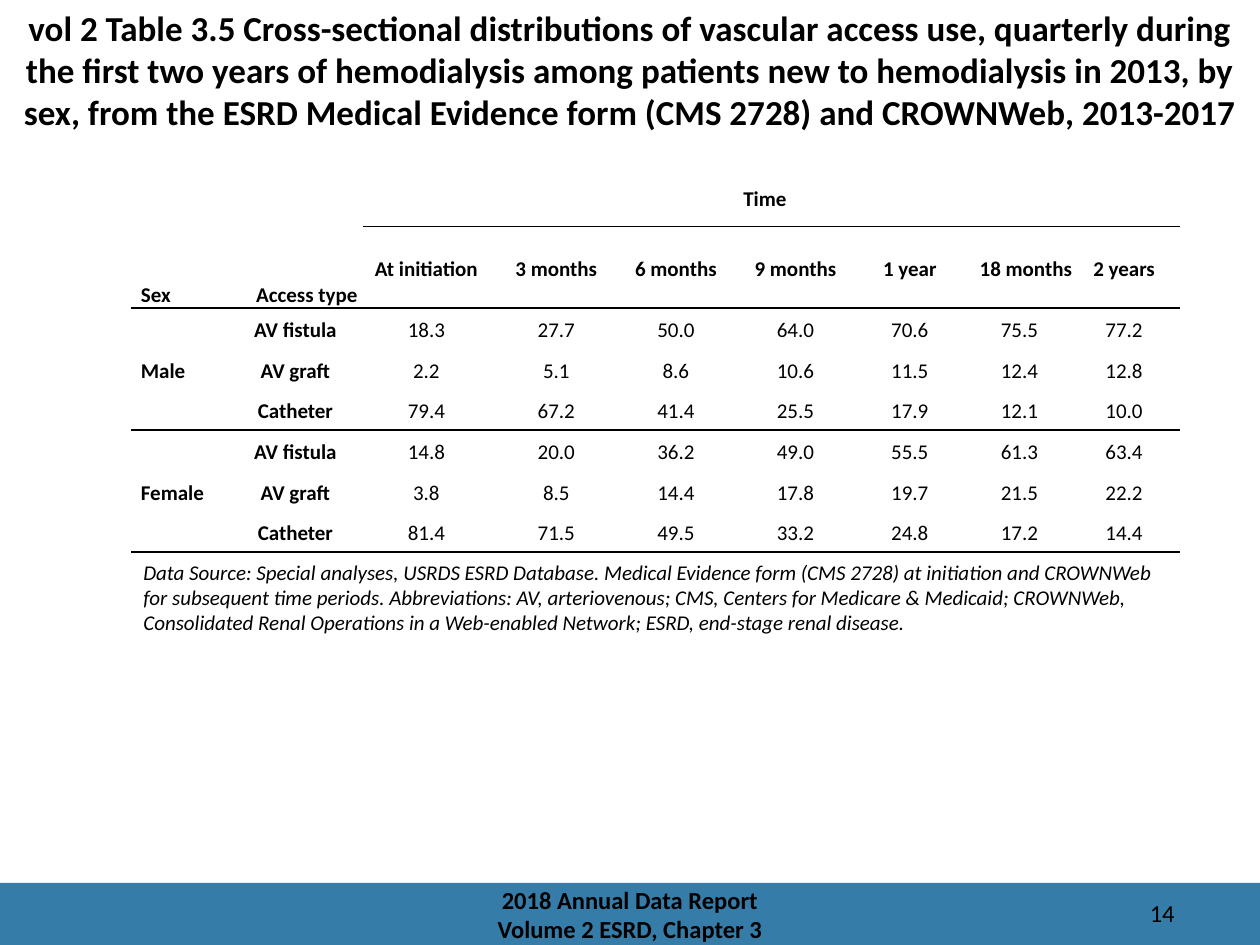
from dataclasses import dataclass

from lxml import etree
from pptx import Presentation
from pptx.dml.color import RGBColor
from pptx.enum.shapes import MSO_SHAPE
from pptx.enum.text import MSO_ANCHOR, PP_ALIGN
from pptx.oxml.ns import qn
from pptx.util import Cm, Pt

LEFT, CENTER, RIGHT = PP_ALIGN.LEFT, PP_ALIGN.CENTER, PP_ALIGN.RIGHT
TOP, MIDDLE, BOTTOM = MSO_ANCHOR.TOP, MSO_ANCHOR.MIDDLE, MSO_ANCHOR.BOTTOM
RECTANGLE = MSO_SHAPE.RECTANGLE


@dataclass(frozen=True)
class Theme:
    font: str = "Calibri"
    ink: str = "000000"
    paper: str = "FFFFFF"
    band: str = "367CA8"
    title_size: int = 20
    footer_size: int = 14
    body_size: int = 12
    rule_width: int = 1


THEME = Theme()
TITLE = (
    "vol 2 Table 3.5 Cross-sectional distributions of vascular access use, quarterly during "
    "the first two years of hemodialysis among patients new to hemodialysis in 2013, by sex, "
    "from the ESRD Medical Evidence form (CMS 2728) and CROWNWeb, 2013-2017"
)
SOURCE_NOTE = (
    "Data Source: Special analyses, USRDS ESRD Database. Medical Evidence form (CMS 2728) at "
    "initiation and CROWNWeb for subsequent time periods. Abbreviations: AV, arteriovenous; "
    "CMS, Centers for Medicare & Medicaid; CROWNWeb, Consolidated Renal Operations in a "
    "Web-enabled Network; ESRD, end-stage renal disease."
)
FOOTER = "2018 Annual Data Report\vVolume 2 ESRD, Chapter 3"
PAGE_NUMBER = "14"
TIMES = ["At initiation", "3 months", "6 months", "9 months", "1 year", "18 months", "2 years"]
ACCESS_TYPES = ["AV fistula", "AV graft", "Catheter"]
SHARES = {
    "Male": [
        ["18.3", "27.7", "50.0", "64.0", "70.6", "75.5", "77.2"],
        ["2.2", "5.1", "8.6", "10.6", "11.5", "12.4", "12.8"],
        ["79.4", "67.2", "41.4", "25.5", "17.9", "12.1", "10.0"],
    ],
    "Female": [
        ["14.8", "20.0", "36.2", "49.0", "55.5", "61.3", "63.4"],
        ["3.8", "8.5", "14.4", "17.8", "19.7", "21.5", "22.2"],
        ["81.4", "71.5", "49.5", "33.2", "24.8", "17.2", "14.4"],
    ],
}
COLUMN_WIDTHS = [2.22, 2.45, 2.83, 2.41, 2.41, 2.41, 2.2, 2.22, 2.0]
HEADER_HEIGHTS = [1.19, 1.64]
DATA_HEIGHT = 0.82
LABEL_COLUMNS = 2
HEADER_ROWS = len(HEADER_HEIGHTS)
GROUP_SIZE = len(ACCESS_TYPES)
TABLE_LEFT, TABLE_TOP = 2.64, 3.38


def write_text(frame, text, *, size, bold=False, italic=False, align=LEFT,
               anchor=TOP, line_spacing=None):
    frame.word_wrap = True
    frame.vertical_anchor = anchor
    paragraph = frame.paragraphs[0]
    paragraph.text = text
    paragraph.alignment = align
    paragraph.line_spacing = line_spacing
    for run in paragraph.runs:
        run.font.name = THEME.font
        run.font.size = Pt(size)
        run.font.bold = bold
        run.font.italic = italic
        run.font.color.rgb = RGBColor.from_string(THEME.ink)


def add_text(slide, text, box, **text_format):
    shape = slide.shapes.add_textbox(*map(Cm, box))
    write_text(shape.text_frame, text, **text_format)


def add_band(slide, box):
    shape = slide.shapes.add_shape(RECTANGLE, *map(Cm, box))
    shape.shadow.inherit = False
    shape.fill.solid()
    shape.fill.fore_color.rgb = RGBColor.from_string(THEME.band)
    shape.line.fill.background()


def set_borders(cell, ruled_sides):
    properties = cell._tc.get_or_add_tcPr()
    for side in ("lnL", "lnR", "lnT", "lnB"):
        line = etree.SubElement(properties, qn(f"a:{side}"))
        if side in ruled_sides:
            line.set("w", str(Pt(THEME.rule_width)))
            fill = etree.SubElement(line, qn("a:solidFill"))
            etree.SubElement(fill, qn("a:srgbClr"), val=THEME.ink)
        else:
            line.set("w", "0")
            etree.SubElement(line, qn("a:noFill"))


def find_ruled_sides(cell, row, column):
    def has_rule_above(edge):
        if edge < HEADER_ROWS:
            return edge == 1 and column >= LABEL_COLUMNS
        return (edge - HEADER_ROWS) % GROUP_SIZE == 0

    height = cell.span_height if cell.is_merge_origin else 1
    sides = {"lnT": has_rule_above(row), "lnB": has_rule_above(row + height)}
    return [side for side, ruled in sides.items() if ruled]


def build_rows():
    rows = [["Sex", "Access type", "Time"], ["", "", *TIMES]]
    for sex, group in SHARES.items():
        for index, (access, values) in enumerate(zip(ACCESS_TYPES, group)):
            rows.append([sex if index == 0 else "", access, *values])
    return rows


def merge_cells(table):
    table.cell(0, LABEL_COLUMNS).merge(table.cell(0, len(COLUMN_WIDTHS) - 1))
    for column in range(LABEL_COLUMNS):
        table.cell(0, column).merge(table.cell(HEADER_ROWS - 1, column))
    for group in range(len(SHARES)):
        first = HEADER_ROWS + group * GROUP_SIZE
        table.cell(first, 0).merge(table.cell(first + GROUP_SIZE - 1, 0))


def format_cell(cell, row, column, text):
    set_borders(cell, find_ruled_sides(cell, row, column))
    cell.fill.background()
    if row >= HEADER_ROWS and column < LABEL_COLUMNS:
        cell.fill.solid()
        cell.fill.fore_color.rgb = RGBColor.from_string(THEME.paper)
    cell.margin_left = Cm(0 if text == "18 months" else 0.2)
    cell.margin_right = Cm(0 if text in ("18 months", "Access type") else 0.46)
    cell.margin_top = cell.margin_bottom = 0
    is_label = column < LABEL_COLUMNS
    if text:
        write_text(cell.text_frame, text, size=THEME.body_size,
                   bold=row < HEADER_ROWS or is_label,
                   align=LEFT if column == 0 else CENTER, line_spacing=1.15)
    cell.vertical_anchor = BOTTOM if row == 0 and is_label else MIDDLE


def add_access_table(slide):
    rows = build_rows()
    heights = HEADER_HEIGHTS + [DATA_HEIGHT] * (len(rows) - HEADER_ROWS)
    frame = slide.shapes.add_table(
        len(rows), len(COLUMN_WIDTHS), Cm(TABLE_LEFT), Cm(TABLE_TOP),
        Cm(sum(COLUMN_WIDTHS)), Cm(sum(heights)))
    table = frame.table
    table.first_row = table.horz_banding = False
    for table_column, width in zip(table.columns, COLUMN_WIDTHS):
        table_column.width = Cm(width)
    for table_row, height in zip(table.rows, heights):
        table_row.height = Cm(height)
    merge_cells(table)
    for row, texts in enumerate(rows):
        for column in range(len(COLUMN_WIDTHS)):
            text = texts[column] if column < len(texts) else ""
            format_cell(table.cell(row, column), row, column, text)


def main():
    presentation = Presentation()
    presentation.slide_width, presentation.slide_height = Cm(25.4), Cm(19.05)
    slide = presentation.slides.add_slide(presentation.slide_layouts[6])
    add_band(slide, (0, 17.8, 25.4, 1.25))
    add_text(slide, PAGE_NUMBER, (21.39, 17.98, 2.54, 0.76),
             size=THEME.footer_size, align=RIGHT)
    add_text(slide, TITLE, (0, 0, 25.4, 3.94), size=THEME.title_size, bold=True, align=CENTER)
    add_access_table(slide)
    add_text(slide, FOOTER, (8.41, 17.8, 8.58, 1.25), size=THEME.footer_size,
             bold=True, align=CENTER, anchor=MIDDLE)
    add_text(slide, SOURCE_NOTE, (TABLE_LEFT, 11.15, 21.15, 1.8),
             size=THEME.body_size, italic=True)
    presentation.save("out.pptx")


if __name__ == "__main__":
    main()
